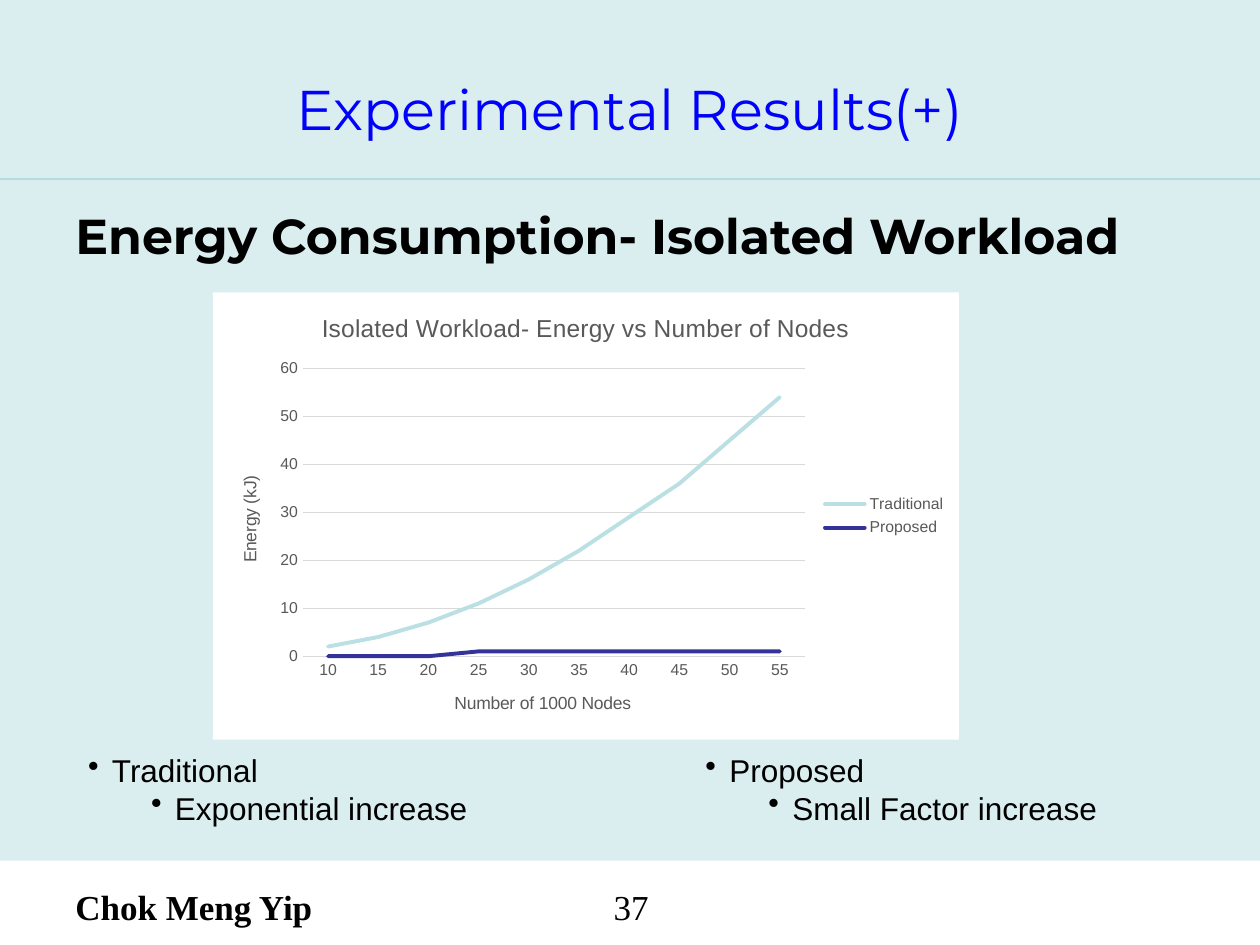
"""Build the slide on energy use under an isolated workload."""
from lxml import etree
from pptx import Presentation
from pptx import util as u
from pptx.chart.data import CategoryChartData
from pptx.dml.color import RGBColor
from pptx.enum import chart as ch, shapes, text
from pptx.oxml import parse_xml
from pptx.oxml.ns import nsdecls, qn

HUES = dict(back="DAEDEF", white="FFFFFF", black="000000", blue="0000FF",
            rule="B6DCDF", gray="595959", grid="D9D9D9",
            pale="BBE0E3", navy="333399")
MID = dict(alignment=text.PP_ALIGN.CENTER)
TEXTS = [
    ("Chok Meng Yip", (0.5, 6.98, 2.1, 0.44),
     dict(name="Times New Roman", size=20, bold=True), "black", {}, dict(word_wrap=False)),
    ("37", (4.43, 6.98, 1.16, 0.44),
     dict(name="Times New Roman", size=20), "black", MID, {}),
    ("Energy Consumption- Isolated Workload", (0.5, 1.58, 9, 0.6),
     dict(name="Montserrat", size=28, bold=True), "black", {}, {}),
    ("Experimental Results(+)", (0.5, 0.3, 9, 1.12),
     dict(name="Montserrat", size=32), "blue", MID,
     dict(vertical_anchor=text.MSO_ANCHOR.MIDDLE)),
]
LISTS = [(0.6, ["Traditional", "Exponential increase"]),
         (5.5, ["Proposed", "Small Factor increase"])]
HEAD = "Isolated Workload- Energy vs Number of Nodes"
NODES = [str(n) for n in range(10, 60, 5)]
LINES = [("Traditional", "pale", [2, 4, 7, 11, 16, 22, 29, 36, 45, 54]),
         ("Proposed", "navy", [0, 0, 0, 1, 1, 1, 1, 1, 1, 1])]


def rgb(hue):
    return RGBColor.from_string(HUES[hue])


def put(item, vals):
    for key, val in vals.items():
        setattr(item, key, val)


def style(font, hue, vals):
    put(font, {**vals, "size": u.Pt(vals["size"])})
    font.color.rgb = rgb(hue)


def stroke(line, hue, width):
    line.color.rgb = rgb(hue)
    line.width = u.Pt(width)


def add_box(slide, area, frame):
    box = slide.shapes.add_textbox(*map(u.Inches, area)).text_frame
    put(box, {"word_wrap": True, **frame})
    return box


def add_band(slide):
    band = slide.shapes.add_shape(shapes.MSO_SHAPE.RECTANGLE,
                                  *map(u.Inches, (0, 6.83, 10, 0.67)))
    band.shadow.inherit = False
    band.fill.solid()
    band.fill.fore_color.rgb = rgb("white")
    band.line.fill.background()
    rule = slide.shapes.add_connector(shapes.MSO_CONNECTOR.STRAIGHT,
                                      *map(u.Inches, (0, 1.42, 10, 1.42)))
    stroke(rule.line, "rule", 0.75)
    etree.SubElement(rule._element.spPr, qn("a:effectLst"))


def add_list(slide, left, items):
    box = add_box(slide, (left, 5.91, 4.29, 0.71), {})
    for level, words in enumerate(items):
        para = box.add_paragraph() if level else box.paragraphs[0]
        para.level = level
        props = para._p.get_or_add_pPr()
        props.set("marL", str(u.Inches(0.19 + level * 0.5)))
        props.set("indent", str(u.Inches(-0.19)))
        etree.SubElement(props, qn("a:buChar")).set("char", "•")
        run = para.add_run()
        run.text = words
        style(run.font, "black", dict(name="Arial", size=18))


def add_title(owner, words, size):
    frame = (owner.chart_title if hasattr(owner, "chart_title")
             else owner.axis_title).text_frame
    frame.text = words
    style(frame.paragraphs[0].runs[0].font, "gray",
          dict(name="Arial", size=size, bold=False))


def add_graph(slide):
    data = CategoryChartData()
    data.categories = NODES
    for name, _, vals in LINES:
        data.add_series(name, vals)
    chart = slide.shapes.add_chart(ch.XL_CHART_TYPE.LINE,
                                   *map(u.Inches, (1.69, 2.32, 5.92, 3.55)),
                                   data).chart
    style(chart.font, "black", dict(name="Arial", size=10))
    chart._chartSpace.find(qn("c:chart")).addnext(parse_xml(
        f'<c:spPr {nsdecls("c", "a")}><a:solidFill><a:srgbClr val="{HUES["white"]}"/>'
        '</a:solidFill><a:ln><a:noFill/></a:ln></c:spPr>'))
    add_title(chart, HEAD, 14)
    chart.has_legend = True
    put(chart.legend, dict(position=ch.XL_LEGEND_POSITION.RIGHT,
                           include_in_layout=False))
    small = dict(name="Arial", size=9)
    style(chart.legend.font, "gray", small)
    cat, val = chart.category_axis, chart.value_axis
    for axis, words in ((cat, "Number of 1000 Nodes"), (val, "Energy (kJ)")):
        add_title(axis, words, 10)
        axis.major_tick_mark = axis.minor_tick_mark = ch.XL_TICK_MARK.NONE
        style(axis.tick_labels.font, "gray", small)
    stroke(cat.format.line, "grid", 0.75)
    val.format.line.fill.background()
    put(val, dict(minimum_scale=0, maximum_scale=60, major_unit=10))
    stroke(val.major_gridlines.format.line, "grid", 0.75)
    chart.plots[0].vary_by_categories = False
    for row, (_, hue, _) in zip(chart.plots[0].series, LINES):
        row.smooth = False
        row.marker.style = ch.XL_MARKER_STYLE.NONE
        stroke(row.format.line, hue, 2.25)
        row.format.line._ln.set("cap", "rnd")


def main():
    deck = Presentation()
    put(deck, dict(slide_width=u.Inches(10), slide_height=u.Inches(7.5)))
    slide = deck.slides.add_slide(deck.slide_layouts[6])
    slide.background.fill.solid()
    slide.background.fill.fore_color.rgb = rgb("back")
    add_band(slide)
    for words, area, font, hue, form, frame in TEXTS:
        para = add_box(slide, area, frame).paragraphs[0]
        put(para, form)
        run = para.add_run()
        run.text = words
        style(run.font, hue, font)
    for left, items in LISTS:
        add_list(slide, left, items)
    add_graph(slide)
    deck.save("out.pptx")


if __name__ == "__main__":
    main()
